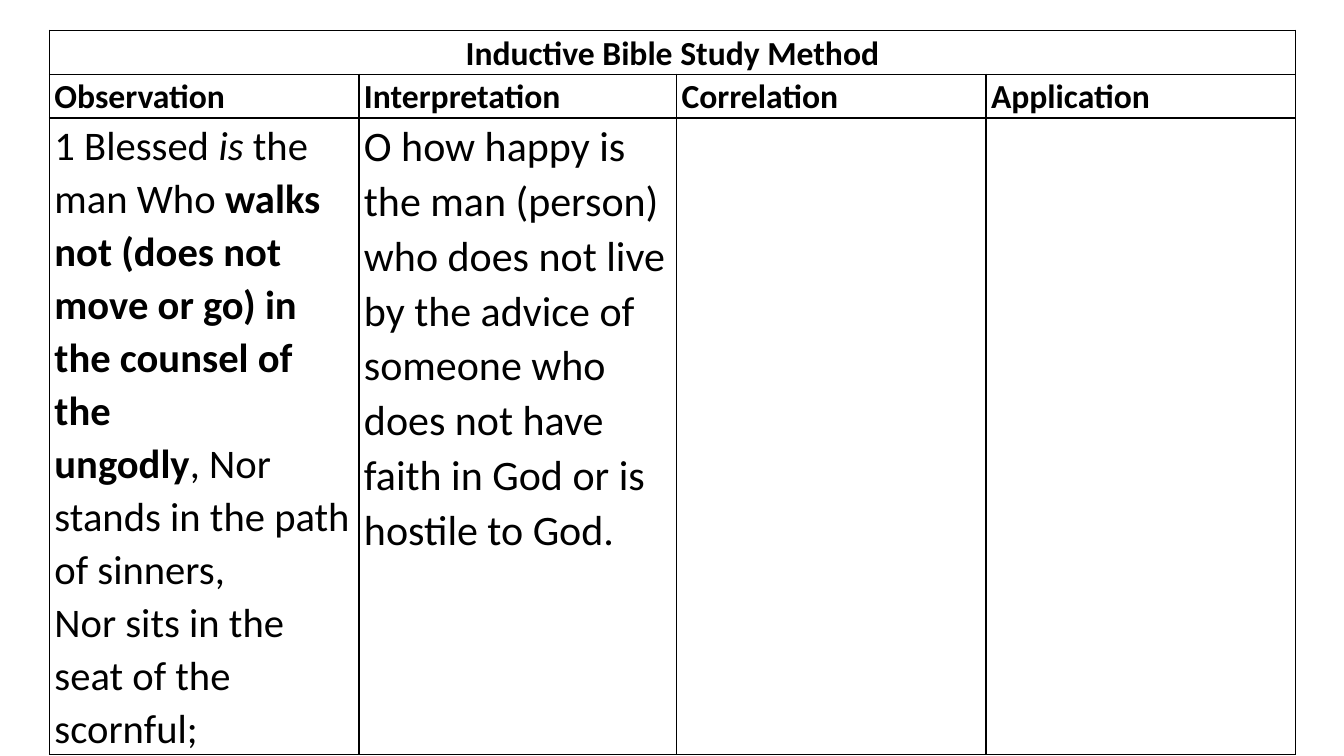
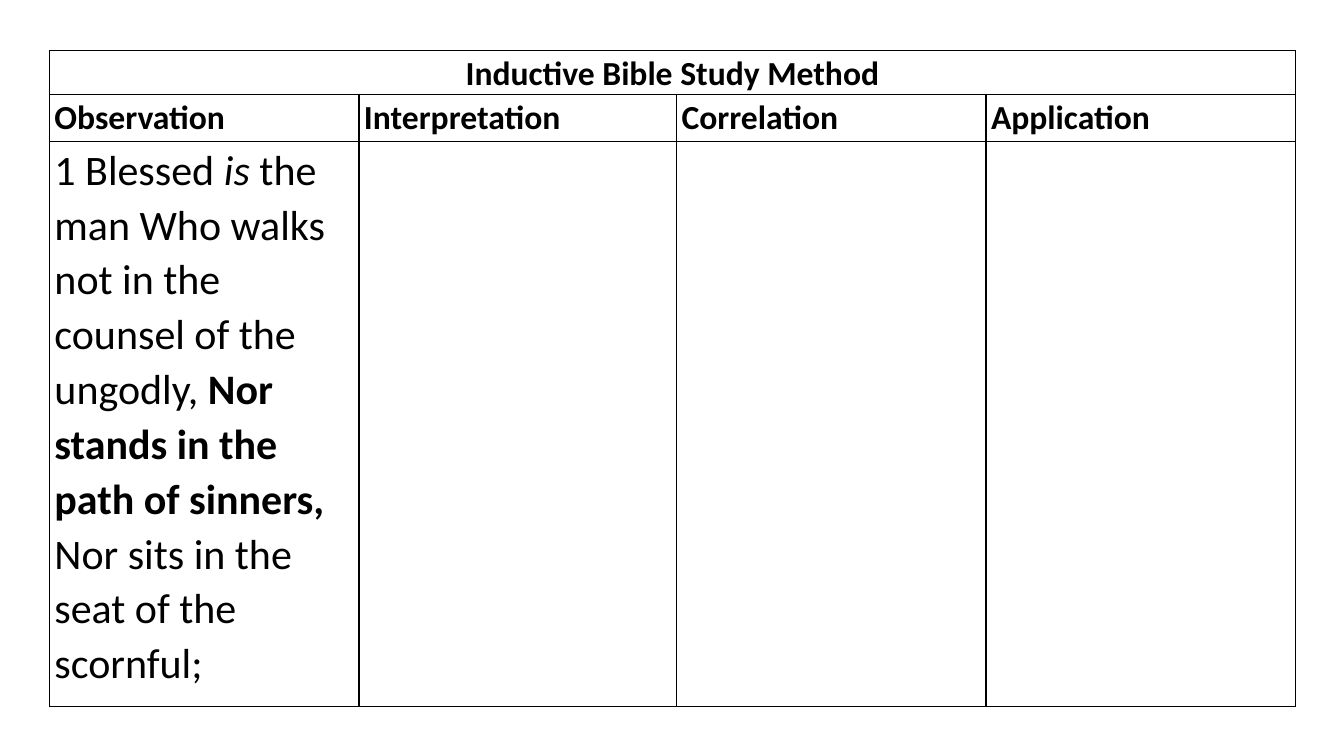
"""Build two Bible study worksheets, each a four-column table on its own slide."""
from dataclasses import dataclass

from lxml import etree
from pptx import Presentation
from pptx import util as u
from pptx.dml.color import RGBColor
from pptx.enum import text
from pptx.oxml import ns
from pptx.slide import Slide
from pptx.table import _Cell


@dataclass(frozen=True)
class Theme:
    font: str = "Calibri"
    ink: str = "000000"
    paper: str = "FFFFFF"
    heading_size: int = 24
    line_spacing: float = 1.07
    border_width: int = 1
    side_margin: float = 0.05


@dataclass(frozen=True)
class Span:
    words: str
    bold: bool = False
    italic: bool = False


@dataclass(frozen=True)
class Entry:
    size: int
    paragraphs: tuple[tuple[Span, ...], ...]


@dataclass(frozen=True)
class Worksheet:
    top: float
    row_heights: tuple[float, ...]
    entries: tuple[Entry, ...]


THEME = Theme()
TITLE = "Inductive Bible Study Method"
STEPS = ("Observation", "Interpretation", "Correlation", "Application")
COLUMN_WIDTHS = (3.07, 3.15, 3.07, 3.07)
TABLE_LEFT = 0.49

WORKSHEETS = (
    Worksheet(0.3, (0.4, 0.4, 6.02), (
        Entry(29, (
            (Span("1 Blessed "), Span("is", italic=True),
             Span(" the man Who "), Span("walks", bold=True)),
            (Span("not (does not move or go) in the counsel of the", bold=True),),
            (Span("ungodly", bold=True),
             Span(", Nor stands in the path of sinners,\n"
                  "Nor sits in the seat of the scornful;")),
        )),
        Entry(30, (
            (Span("O how happy is the man (person) who does not live by the advice of "
                  "someone who does not have faith in God or is hostile to God."),),
        )),
    )),
    Worksheet(0.5, (0.43, 0.47, 5.6), (
        Entry(30, (
            (Span("1 Blessed "), Span("is", italic=True),
             Span(" the man Who walks")),
            (Span("not in the counsel of the"),),
            (Span("ungodly, "),
             Span("Nor stands in the path of sinners,\n", bold=True),
             Span("Nor sits in the seat of the scornful;")),
        )),
    )),
)


def style_cell(cell: _Cell) -> None:
    """Give a cell its margins, thin borders and plain fill."""
    cell.margin_left = cell.margin_right = u.Inches(THEME.side_margin)
    cell.margin_top = cell.margin_bottom = 0
    properties = cell._tc.get_or_add_tcPr()
    for side in ("L", "R", "T", "B"):
        line = etree.SubElement(properties, ns.qn(f"a:ln{side}"),
                                w=str(u.Pt(THEME.border_width)))
        fill = etree.SubElement(line, ns.qn("a:solidFill"))
        etree.SubElement(fill, ns.qn("a:srgbClr"), val=THEME.ink)
    cell.fill.solid()
    cell.fill.fore_color.rgb = RGBColor.from_string(THEME.paper)


def write_entry(cell: _Cell, entry: Entry, centred: bool = False) -> None:
    """Write an entry's paragraphs of formatted spans into a cell."""
    frame = cell.text_frame
    for index, spans in enumerate(entry.paragraphs):
        para = frame.add_paragraph() if index else frame.paragraphs[0]
        para.line_spacing = THEME.line_spacing
        para.alignment = text.PP_ALIGN.CENTER if centred else text.PP_ALIGN.LEFT
        for span in spans:
            for number, words in enumerate(span.words.split("\n")):
                if number:
                    para.add_line_break()
                if words:
                    run = para.add_run()
                    run.text = words
                    run.font.name = THEME.font
                    run.font.size = u.Pt(entry.size)
                    run.font.bold = span.bold
                    run.font.italic = span.italic
                    run.font.color.rgb = RGBColor.from_string(THEME.ink)


def heading(words: str) -> Entry:
    """Return a bold one-line entry at heading size."""
    return Entry(THEME.heading_size, ((Span(words, bold=True),),))


def draw_worksheet(page: Slide, sheet: Worksheet) -> None:
    """Draw one worksheet table on a slide."""
    table = page.shapes.add_table(
        len(sheet.row_heights), len(STEPS), u.Inches(TABLE_LEFT), u.Inches(sheet.top),
        u.Inches(sum(COLUMN_WIDTHS)), u.Inches(sum(sheet.row_heights))).table
    table.first_row = table.horz_banding = False
    for column, width in zip(table.columns, COLUMN_WIDTHS):
        column.width = u.Inches(width)
    for row, height in zip(table.rows, sheet.row_heights):
        row.height = u.Inches(height)
    for cell in table.iter_cells():
        style_cell(cell)
    table.cell(0, 0).merge(table.cell(0, len(STEPS) - 1))
    write_entry(table.cell(0, 0), heading(TITLE), centred=True)
    for column, step in enumerate(STEPS):
        write_entry(table.cell(1, column), heading(step))
    for column, entry in enumerate(sheet.entries):
        write_entry(table.cell(2, column), entry)


def main() -> None:
    """Build and save the deck."""
    deck = Presentation()
    deck.slide_width, deck.slide_height = u.Inches(13.33), u.Inches(7.5)
    blank = deck.slide_layouts.get_by_name("Blank")
    for sheet in WORKSHEETS:
        draw_worksheet(deck.slides.add_slide(blank), sheet)
    deck.save("out.pptx")


if __name__ == "__main__":
    main()
